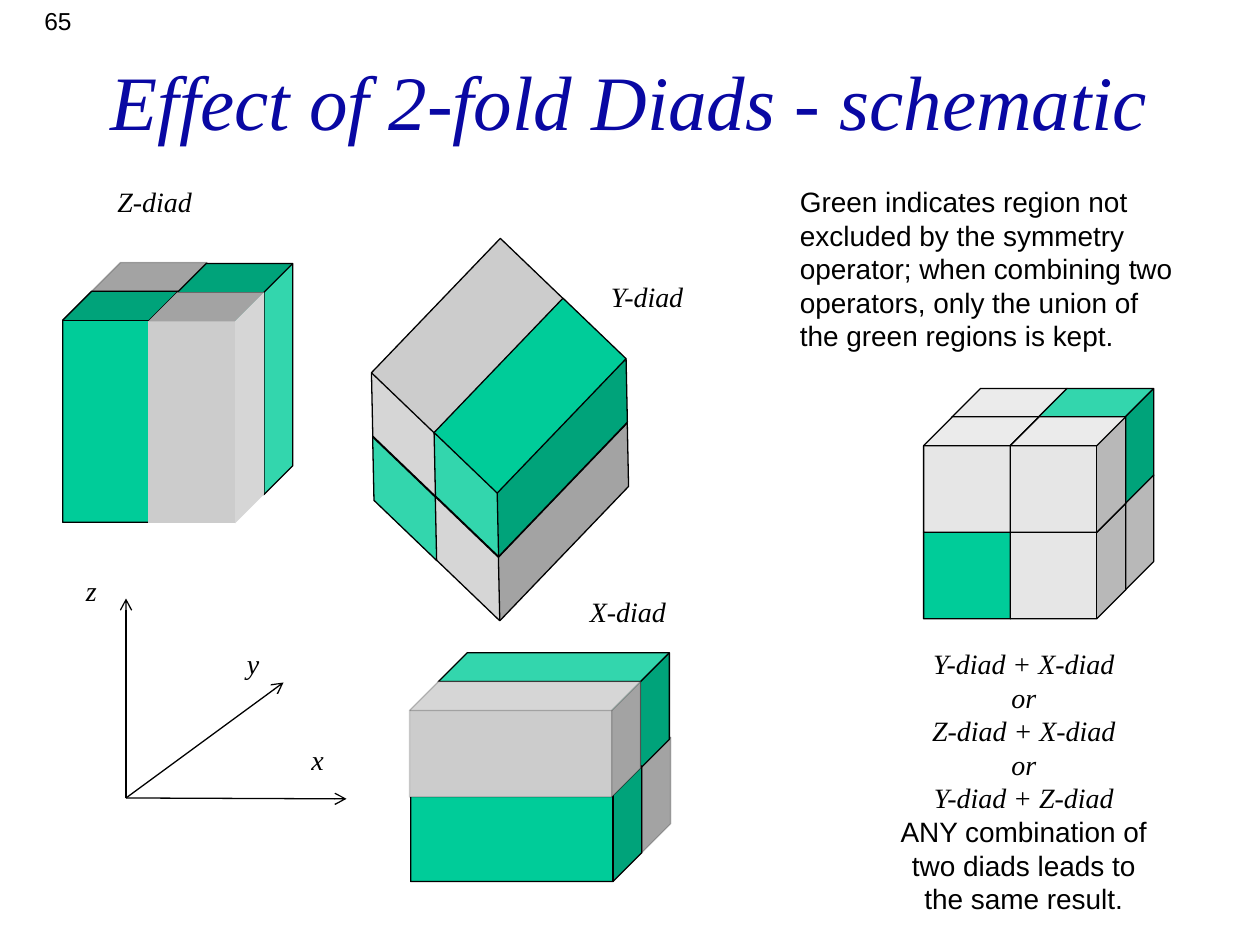
from itertools import product
from lxml import etree
from pptx import Presentation
from pptx.dml.color import RGBColor
from pptx.enum.shapes import MSO_CONNECTOR as CONN, MSO_SHAPE as SHAPE
from pptx.enum.text import MSO_ANCHOR as ANCHOR, PP_ALIGN as ALIGN
from pptx.oxml.ns import qn
from pptx.util import Pt

COLORS = {"title": "0908A3", "text": "000000", "line": "000000",
          "green": "00CC99", "grey": "CCCCCC", "pale": "E6E6E6"}
SERIF = {"name": "Times New Roman", "size": Pt(16), "italic": True}
SANS = {"name": "Arial", "size": Pt(16), "italic": False}

# Cube styles: fill colour and opacity of the outline in percent
GREEN, GREY, FAINT, BARE, PALE = (
    ("green", 100), ("grey", 100), ("grey", 21), ("grey", 0), ("pale", 100))


def rgb(key):
    return RGBColor.from_string(COLORS[key])


class Sketch:
    """Holds the line style and the current slide; lengths are in points."""

    line_width = 0.75

    def __init__(self, slide):
        self.s = slide

    def fill_paragraph(self, p, text, font, color="text", align=ALIGN.LEFT):
        p.alignment = align
        r = p.add_run()
        r.text = text
        for key, value in font.items():
            setattr(r.font, key, value)
        r.font.color.rgb = rgb(color)

    def title(self, text, box):
        sp = self.s.shapes.title
        sp.left, sp.top, sp.width, sp.height = map(Pt, box)
        tf = sp.text_frame
        tf.vertical_anchor = ANCHOR.MIDDLE
        self.fill_paragraph(tf.paragraphs[0], text, {**SERIF, "size": Pt(44)},
                            "title", ALIGN.CENTER)

    def text(self, paragraphs, box, align=ALIGN.LEFT, wrap=True):
        """Add a text box from (text, font) pairs."""
        tf = self.s.shapes.add_textbox(*map(Pt, box)).text_frame
        tf.word_wrap = wrap
        for i, (text, font) in enumerate(paragraphs):
            p = tf.add_paragraph() if i else tf.paragraphs[0]
            self.fill_paragraph(p, text, font, align=align)

    def label(self, text, left, top, width):
        self.text([(text, SERIF)], (left, top, width, 26.6), wrap=False)

    def outline(self, sp):
        """Set the line of a shape and return its XML element."""
        sp.line.color.rgb = rgb("line")
        sp.line.width = Pt(self.line_width)
        return sp.element.spPr.find(qn("a:ln"))

    def cube(self, shapes, box, style, rotation, flip, depth):
        fill, opacity = style
        sp = shapes.add_shape(SHAPE.CUBE, *map(Pt, box))
        sp.shadow.inherit = False
        sp.rotation = rotation
        sp.adjustments[0] = depth
        if flip:
            sp.element.spPr.find(qn("a:xfrm")).set("flipV", "1")
        sp.fill.solid()
        sp.fill.fore_color.rgb = rgb(fill)
        if not opacity:
            sp.line.fill.background()
            return
        ln = self.outline(sp)
        if opacity < 100:
            clr = ln.find(".//" + qn("a:srgbClr"))
            etree.SubElement(clr, qn("a:alpha")).set("val", str(opacity * 1000))

    def block(self, origin, steps, size, styles, rotation=0, flip=False, depth=0.25):
        """Stack cubes from back to front, two along each step."""
        shapes = self.s.shapes.add_group_shape().shapes
        for cell, style in zip(product((0, 1), repeat=len(steps)), styles):
            x, y = (start + sum(n * step[axis] for n, step in zip(cell, steps))
                    for axis, start in enumerate(origin))
            self.cube(shapes, (x, y, *size), style, rotation, flip, depth)

    def axes(self, origin, tips):
        shapes = self.s.shapes.add_group_shape().shapes
        for tip in tips:
            c = shapes.add_connector(CONN.STRAIGHT, *map(Pt, origin + tip))
            etree.SubElement(self.outline(c), qn("a:tailEnd")).set("type", "arrow")
            etree.SubElement(c.element.spPr, qn("a:effectLst"))


def main():
    prs = Presentation()
    prs.slide_width, prs.slide_height = Pt(720), Pt(540)
    sk = Sketch(prs.slides.add_slide(prs.slide_layouts[5]))

    sk.title("Effect of 2-fold Diads - schematic", (54, 12, 612, 90))
    sk.text([("65", {**SANS, "size": Pt(14)})], (0, 0, 48, 24), ALIGN.RIGHT)

    forward = (-16.5, 16.5)
    slab = (132, 66)
    sk.block((251.2, 421.3), [forward, (-0.7, -48.3)], slab,
             [FAINT, GREEN, GREEN, FAINT])
    sk.block((19.3, 183), [forward, (49, 0.6)], slab,
             [FAINT, GREEN, GREEN, BARE], rotation=270, flip=True)
    sk.block((230.4, 180.7), [(-0.7, -36.7), (35.8, 34.2)], (75.6, 132),
             [GREEN, GREY, GREY, GREEN], rotation=43.8, flip=True, depth=0.339)
    sk.block((543.8, 271.4), [(0, -49.4), (-16, 16.2), (49.5, 0)], (66, 66),
             [PALE, PALE, GREEN, PALE, PALE, GREEN, PALE, PALE])

    sk.axes((72, 456), [(198, 456.5), (72, 342), (162, 390)])
    for label in [("x", 170.8, 421, 27), ("y", 134, 366, 28), ("z", 42, 324, 26),
                  ("Z-diad", 60, 102, 62.6), ("Y-diad", 342, 156, 62.6),
                  ("X-diad", 330, 336, 64)]:
        sk.label(*label)

    pairs = ["Y-diad + X-diad", "or", "Z-diad + X-diad", "or", "Y-diad + Z-diad"]
    sk.text([(pair, SERIF) for pair in pairs]
            + [("ANY combination of two diads leads to the same result.", SANS)],
            (504, 366, 162, 163), ALIGN.CENTER)
    sk.text([("Green indicates region not excluded by the symmetry operator; "
              "when combining two operators, only the union of the green "
              "regions is kept.", SANS)], (450, 102, 228, 104))

    prs.save("out.pptx")


if __name__ == "__main__":
    main()
